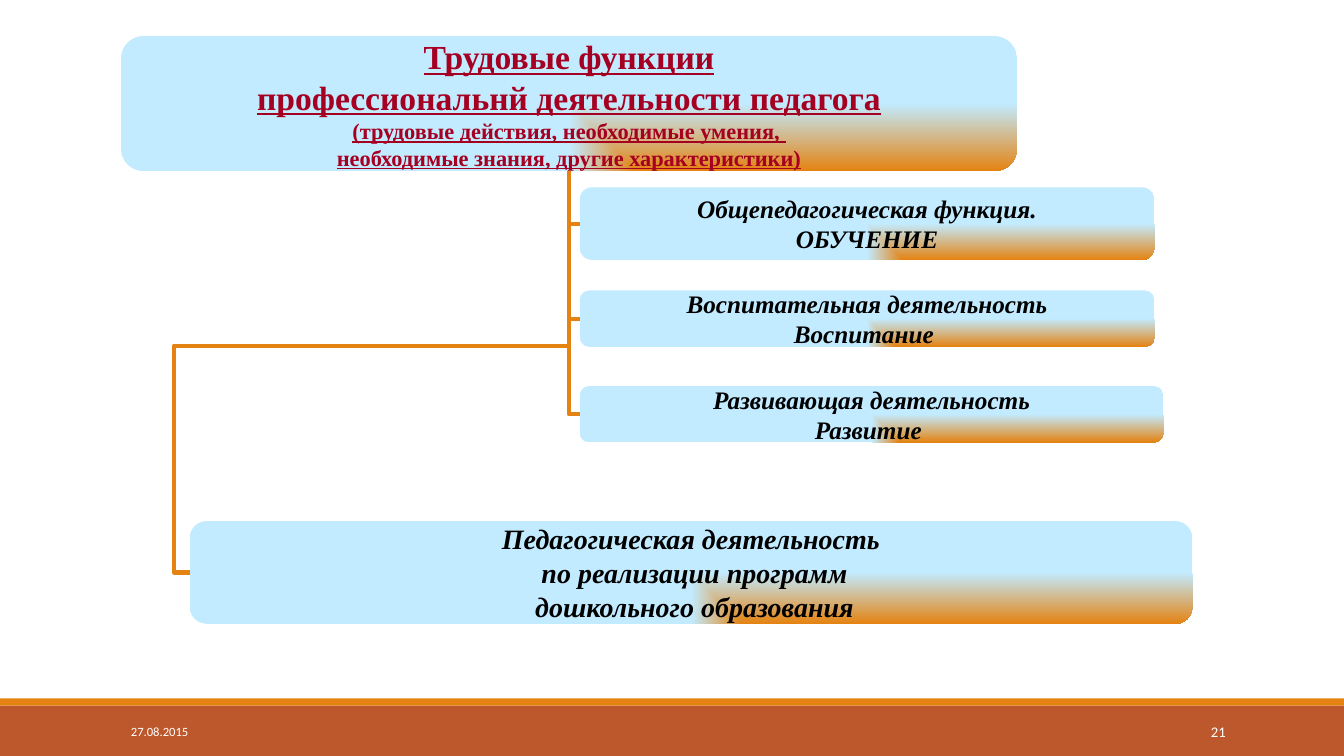
from dataclasses import dataclass

from lxml import etree
from pptx import Presentation
from pptx.dml.color import RGBColor
from pptx.enum.shapes import MSO_CONNECTOR, MSO_SHAPE
from pptx.enum.text import MSO_ANCHOR, PP_ALIGN
from pptx.oxml.ns import qn
from pptx.util import Cm, Pt


@dataclass(frozen=True)
class Theme:
    orange: RGBColor = RGBColor(0xE4, 0x83, 0x12)
    rust: RGBColor = RGBColor(0xBD, 0x58, 0x2C)
    sky: RGBColor = RGBColor(0xC2, 0xEB, 0xFF)
    crimson: RGBColor = RGBColor(0xA5, 0x00, 0x21)
    black: RGBColor = RGBColor(0, 0, 0)
    white: RGBColor = RGBColor(0xFF, 0xFF, 0xFF)
    chart_font: str = "Times New Roman"
    footer_font: str = "Calibri"
    heading: float = 24
    subheading: float = 16
    program: float = 20
    function: float = 18
    date: float = 9
    page: float = 10.5
    branch: float = 3


THEME = Theme()
SLIDE_WIDTH, SLIDE_HEIGHT = 33.87, 19.05

HEADING = [
    ("Трудовые функции", THEME.heading),
    ("профессиональнй деятельности педагога", THEME.heading),
    ("(трудовые действия, необходимые умения, ", THEME.subheading),
    ("необходимые знания, другие характеристики)", THEME.subheading),
]
# Boxes are left, top, width, height in centimetres
HEADING_BOX = (3.05, 0.91, 22.58, 3.4)
FUNCTIONS = [
    ((14.61, 4.72, 14.48, 1.83), ["Общепедагогическая функция.", "ОБУЧЕНИЕ"]),
    ((14.61, 7.32, 14.48, 1.42), ["Воспитательная деятельность", "Воспитание "]),
    ((14.61, 9.73, 14.71, 1.42), ["Развивающая деятельность", "Развитие "]),
]
PROGRAM_BOX = (4.78, 13.13, 25.27, 2.59)
PROGRAM = [
    "Педагогическая деятельность",
    " по реализации программ",
    " дошкольного образования",
]


def lengths(box):
    return [Cm(value) for value in box]


def write_line(paragraph, text, *, size, color, font=THEME.chart_font,
               align=PP_ALIGN.CENTER, bold=False, italic=False, underline=False):
    paragraph.alignment = align
    run = paragraph.add_run()
    run.text = text
    run.font.size = Pt(size)
    run.font.name = font
    run.font.color.rgb = color
    run.font.bold = bold
    run.font.italic = italic
    run.font.underline = underline


def fill_from_corner(shape):
    """Shade the shape from orange at its lower right corner to sky blue."""
    shape.fill.gradient()
    for stop, color, position in zip(
            shape.fill.gradient_stops, (THEME.orange, THEME.sky), (0, 1)):
        stop.color.rgb = color
        stop.position = position
    gradient = shape.element.spPr.find(qn("a:gradFill"))
    gradient.remove(gradient.find(qn("a:lin")))
    shade = etree.SubElement(gradient, qn("a:path"), path="rect")
    etree.SubElement(shade, qn("a:fillToRect"), l="100000", t="100000")


def add_node(slide, box, lines, **style):
    """Add a rounded box holding lines of (text, size)."""
    node = slide.shapes.add_shape(MSO_SHAPE.ROUNDED_RECTANGLE, *lengths(box))
    node.shadow.inherit = False
    node.line.fill.background()
    fill_from_corner(node)
    frame = node.text_frame
    frame.word_wrap = False
    frame.vertical_anchor = MSO_ANCHOR.MIDDLE
    frame.margin_left = frame.margin_right = frame.margin_top = frame.margin_bottom = 0
    for index, (text, size) in enumerate(lines):
        paragraph = frame.add_paragraph() if index else frame.paragraphs[0]
        write_line(paragraph, text, size=size, bold=True, **style)
    return node


def add_branch(slide, child, parent, preset, bends=()):
    """Join the child's left side to the parent's bottom with a bent line."""
    branch = slide.shapes.add_connector(MSO_CONNECTOR.ELBOW, 0, 0, 0, 0)
    branch.begin_connect(child, 1)
    branch.end_connect(parent, 2)
    branch.line.color.rgb = THEME.orange
    branch.line.width = Pt(THEME.branch)
    properties = branch.element.spPr
    etree.SubElement(properties, qn("a:effectLst"))

    # A half turn replaces the flips, so the bends run from child to parent
    turn = properties.find(qn("a:xfrm"))
    turn.rot = 180
    turn.flipH, turn.flipV = not turn.flipH, not turn.flipV

    geometry = properties.find(qn("a:prstGeom"))
    geometry.set("prst", preset)
    guides = geometry.find(qn("a:avLst"))
    for number, bend in enumerate(bends, start=1):
        etree.SubElement(guides, qn("a:gd"), name=f"adj{number}", fmla=f"val {bend}")


def add_function_chart(slide):
    heading = add_node(slide, HEADING_BOX, HEADING,
                       color=THEME.crimson, underline=True)
    program = add_node(slide, PROGRAM_BOX, [(text, THEME.program) for text in PROGRAM],
                       color=THEME.black, italic=True)
    add_branch(slide, program, heading, "bentConnector4", bends=(-4100, 56500))
    for box, lines in FUNCTIONS:
        function = add_node(slide, box, [(text, THEME.function) for text in lines],
                            color=THEME.black, italic=True)
        add_branch(slide, function, heading, "bentConnector2")


def add_footer(slide, box):
    left, top, width, height = box
    strip = 0.18
    for color, band_box in (
            (THEME.rust, (left, top + strip, width, height - strip)),
            (THEME.orange, (left, top, width, strip))):
        band = slide.shapes.add_shape(MSO_SHAPE.RECTANGLE, *lengths(band_box))
        band.shadow.inherit = False
        band.fill.solid()
        band.fill.fore_color.rgb = color
        band.line.fill.background()
    for text, offset, label_width, size, align in (
            ("27.08.2015", 3.05, 6.86, THEME.date, PP_ALIGN.LEFT),
            ("21", 27.51, 3.63, THEME.page, PP_ALIGN.RIGHT)):
        label = slide.shapes.add_textbox(
            *lengths((left + offset, top + 0.33, label_width, 1.02)))
        label.text_frame.word_wrap = True
        label.text_frame.vertical_anchor = MSO_ANCHOR.MIDDLE
        write_line(label.text_frame.paragraphs[0], text, size=size, align=align,
                   color=THEME.white, font=THEME.footer_font)


def main():
    presentation = Presentation()
    presentation.slide_width = Cm(SLIDE_WIDTH)
    presentation.slide_height = Cm(SLIDE_HEIGHT)
    slide = presentation.slides.add_slide(presentation.slide_layouts[6])
    add_footer(slide, (0, 17.6, SLIDE_WIDTH, 1.45))
    add_function_chart(slide)
    presentation.save("out.pptx")


if __name__ == "__main__":
    main()
